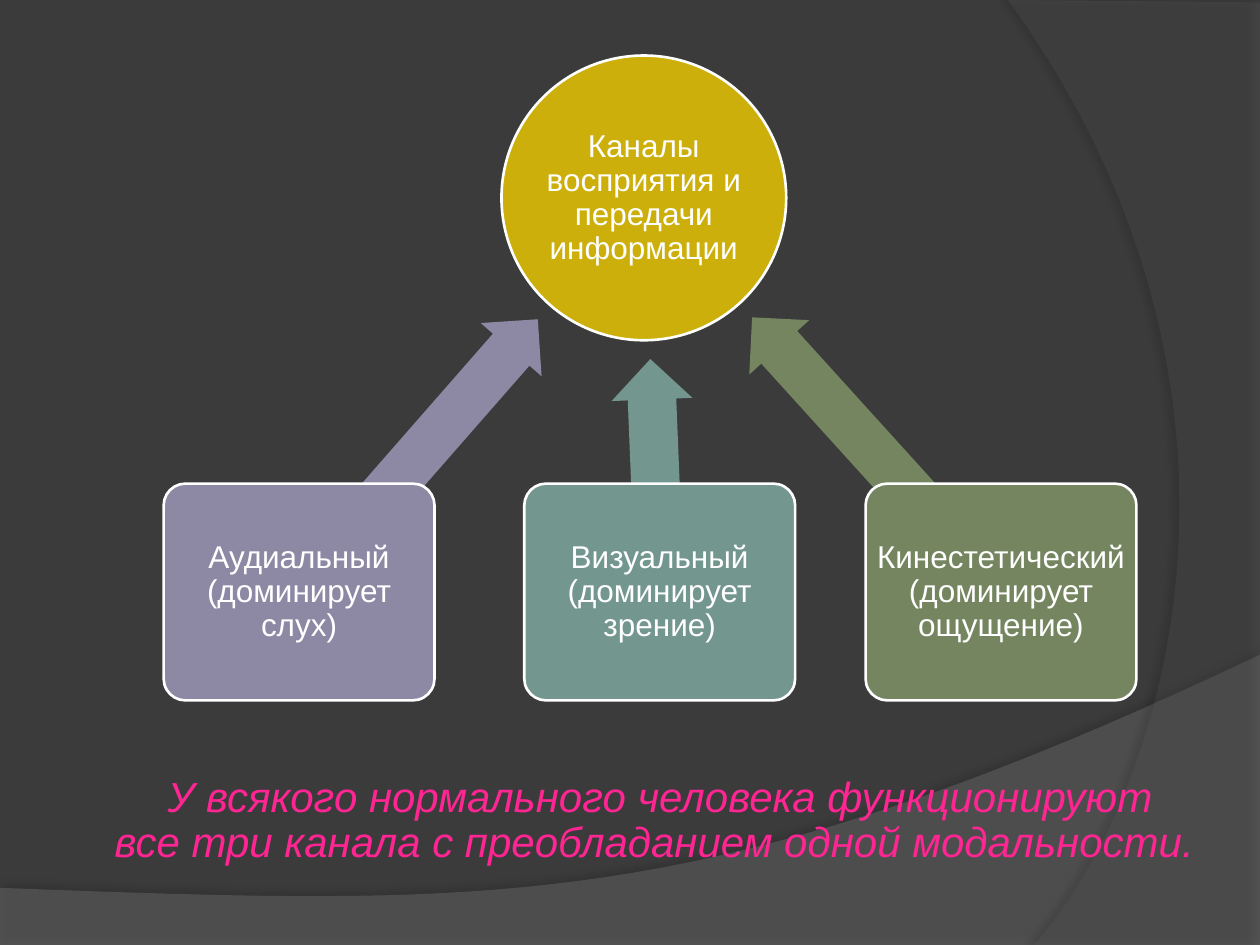
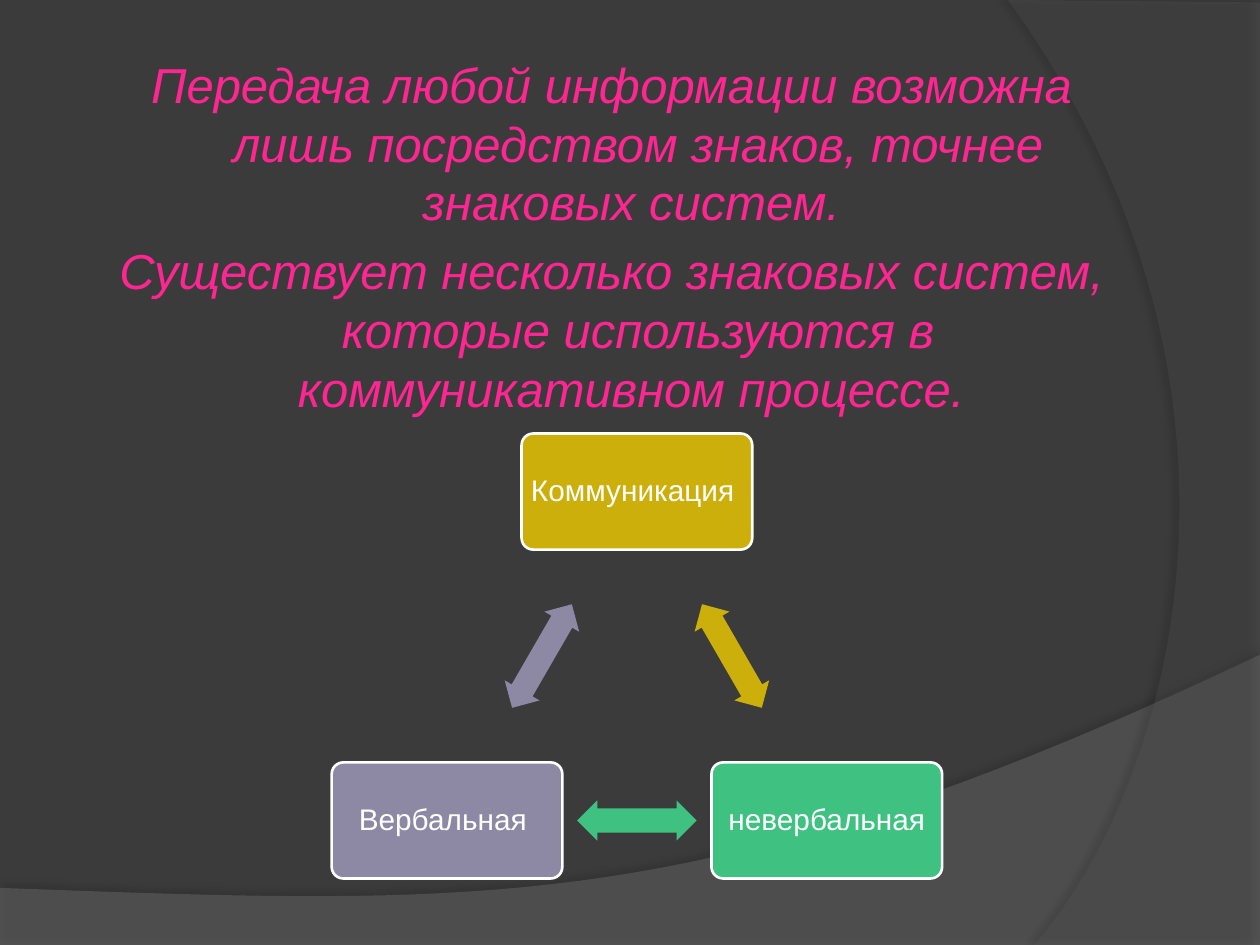
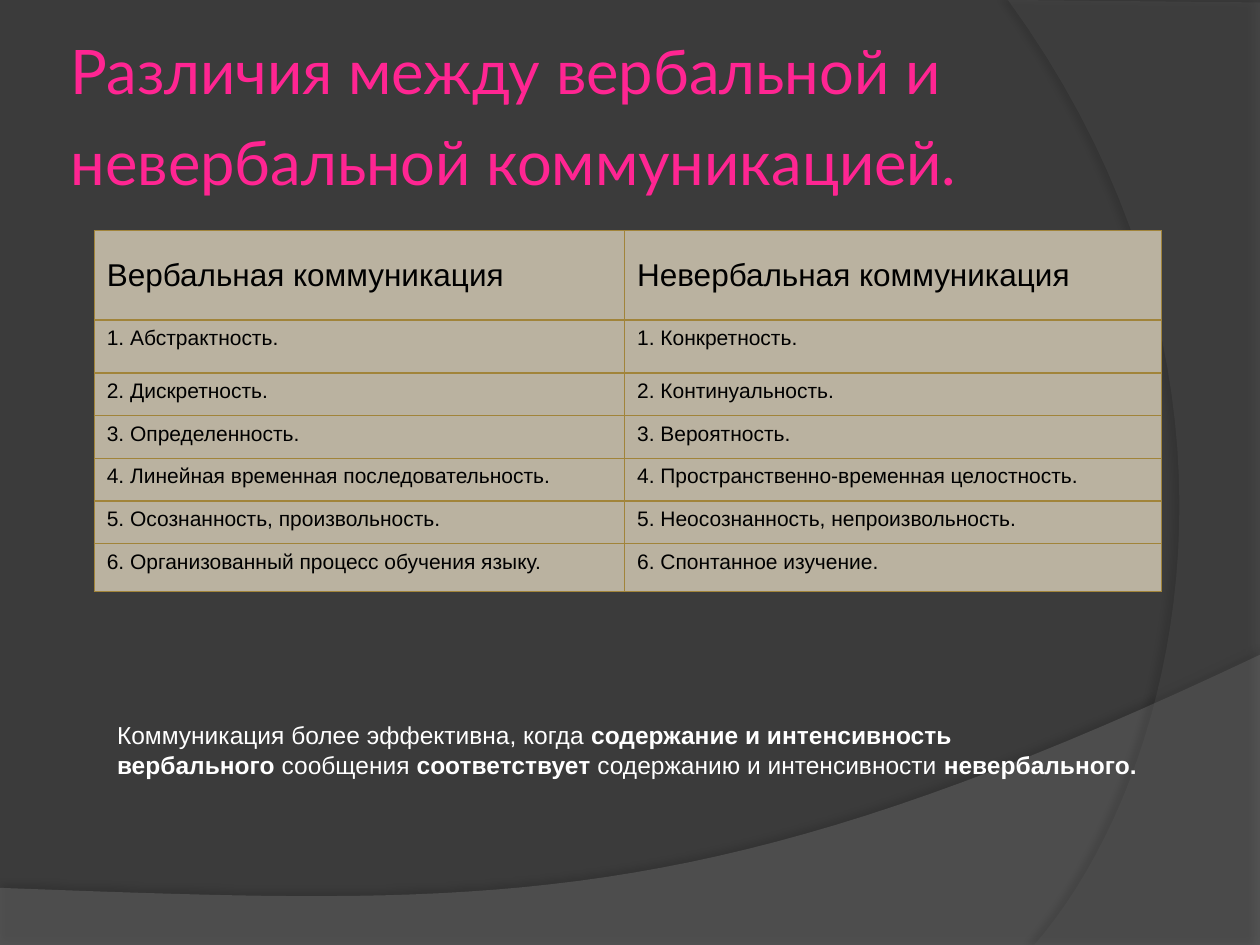
import math

from lxml import etree
from pptx import Presentation
from pptx.dml.color import RGBColor
from pptx.enum import shapes, text
from pptx.oxml import ns
from pptx.util import Cm, Pt

BACKGROUND = RGBColor(0x3B, 0x3B, 0x3B)
LOWER_BAND = RGBColor(0x7F, 0x7F, 0x7F)
RIGHT_BAND = RGBColor(0x5E, 0x5E, 0x5E)
PINK = RGBColor(0xFF, 0x25, 0x92)
WHITE = RGBColor(0xFF, 0xFF, 0xFF)
BLACK = RGBColor(0, 0, 0)
GOLD = RGBColor(0xCC, 0xAF, 0x0A)
LILAC = RGBColor(0x8D, 0x89, 0xA4)
TEAL = RGBColor(0x73, 0x96, 0x8F)
OLIVE = RGBColor(0x74, 0x85, 0x60)
GREEN = RGBColor(0x3F, 0xC2, 0x81)
SAND = RGBColor(0xBA, 0xB2, 0xA0)
BORDER = "A1843A"

SLIDE_W, SLIDE_H = 25.4, 19.05
KIND = shapes.MSO_SHAPE
CENTER = text.PP_ALIGN.CENTER

HUB = "Каналы восприятия и передачи информации"
CHANNELS = [
    ("Аудиальный (доминирует слух)", LILAC, 3.3),
    ("Визуальный (доминирует зрение)", TEAL, 10.57),
    ("Кинестетический (доминирует ощущение)", OLIVE, 17.45),
]
CHANNELS_NOTE = ("У всякого нормального человека функционируют "
                 "все три канала с преобладанием одной модальности.")

SIGNS = [
    "Передача любой информации возможна лишь посредством знаков, точнее знаковых систем. ",
    "Существует несколько знаковых систем, которые используются в коммуникативном процессе. ",
]
CYCLE = [("Коммуникация ", GOLD), ("невербальная", GREEN), ("Вербальная ", LILAC)]

TITLE = "Различия между вербальной и невербальной коммуникацией."
DIFFERENCES = [
    ("Вербальная коммуникация", "Невербальная коммуникация"),
    ("1. Абстрактность.", "1. Конкретность."),
    ("2. Дискретность.", "2. Континуальность."),
    ("3. Определенность.", "3. Вероятность."),
    ("4. Линейная временная последовательность.", "4. Пространственно-временная целостность."),
    ("5. Осознанность, произвольность.", "5. Неосознанность, непроизвольность."),
    ("6. Организованный процесс обучения языку.", "6. Спонтанное изучение."),
]
COLUMN_WIDTHS = [10.69, 10.82]
ROW_HEIGHTS = [1.8, 1.07, 0.86, 0.86, 0.86, 0.86, 0.97]
# Asterisks enclose bold words
EFFECT_NOTE = [
    "Коммуникация более эффективна, когда *содержание и интенсивность*",
    "*вербального* сообщения* соответствует *содержанию и интенсивности *невербального.*",
]


def write(frame, paragraphs, size=18, color=WHITE, font="Arial", italic=False,
          align=None, spacing=None, gap=0, margin=None, indent=None,
          anchor=text.MSO_ANCHOR.TOP):
    """Fill a text frame; asterisks in a paragraph switch bold on and off."""
    frame.word_wrap = True
    frame.vertical_anchor = anchor
    if margin is not None:
        frame.margin_left = frame.margin_right = Cm(margin)
        frame.margin_top = frame.margin_bottom = Cm(margin)
    for i, content in enumerate(paragraphs):
        paragraph = frame.add_paragraph() if i else frame.paragraphs[0]
        paragraph.alignment = align
        if spacing:
            paragraph.line_spacing = spacing
        if i and gap:
            paragraph.space_before = Pt(gap)
        if indent:
            left, first = indent
            properties = paragraph._p.get_or_add_pPr()
            properties.set("marL", str(Cm(left)))
            properties.set("indent", str(Cm(first)))
        for j, words in enumerate(content.split("*")):
            if words:
                add_run(paragraph, words, size, color, font, italic, j % 2 == 1)


def add_run(paragraph, words, size, color, font, italic=False, bold=False):
    run = paragraph.add_run()
    run.text = words
    run.font.size = Pt(size)
    run.font.name = font
    run.font.color.rgb = color
    run.font.italic = italic
    run.font.bold = bold


def add_text(slide, box, paragraphs, **style):
    frame = slide.shapes.add_textbox(*map(Cm, box)).text_frame
    write(frame, paragraphs, **style)
    return frame


def paint(shape, color, outlined=False):
    shape.shadow.inherit = False
    shape.fill.solid()
    shape.fill.fore_color.rgb = color
    if outlined:
        shape.line.color.rgb = WHITE
        shape.line.width = Pt(1.5)
    else:
        shape.line.fill.background()


def add_centered(slide, kind, center, width, height, color, label=None, size=18):
    x, y = center
    shape = slide.shapes.add_shape(kind, Cm(x - width / 2), Cm(y - height / 2),
                                   Cm(width), Cm(height))
    paint(shape, color, outlined=label is not None)
    if kind == KIND.ROUNDED_RECTANGLE:
        shape.adjustments[0] = 0.1
    if label:
        write(shape.text_frame, [label], size=size, align=CENTER, spacing=0.9,
              margin=0.02, anchor=text.MSO_ANCHOR.MIDDLE)
    return shape


def add_arrow(slide, kind, center, length, thickness, rotation, color):
    arrow = add_centered(slide, kind, center, length, thickness, color)
    arrow.adjustments[0], arrow.adjustments[1] = 0.6, 0.5
    arrow.rotation = rotation % 360


def bezier(start, control_1, control_2, end, steps=40):
    points = []
    for i in range(steps + 1):
        t = i / steps
        weights = ((1 - t) ** 3, 3 * t * (1 - t) ** 2, 3 * t * t * (1 - t), t ** 3)
        points.append(tuple(
            sum(w * p[axis] for w, p in zip(weights, (start, control_1, control_2, end)))
            for axis in (0, 1)))
    return points


def add_band(slide, points, color, opacity, shade, distance, direction):
    """Translucent shape with a soft shadow; percentages, points and degrees."""
    builder = slide.shapes.build_freeform(Cm(points[0][0]), Cm(points[0][1]))
    builder.add_line_segments([(Cm(x), Cm(y)) for x, y in points[1:]], close=True)
    band = builder.convert_to_shape()
    paint(band, color)
    properties = band._element.spPr
    fill_color = properties.find(ns.qn("a:solidFill"))[0]
    etree.SubElement(fill_color, ns.qn("a:alpha"), val=str(opacity * 1000))
    shadow = etree.SubElement(
        properties.find(ns.qn("a:effectLst")), ns.qn("a:outerShdw"),
        blurRad=str(Pt(4)), dist=str(Pt(distance)), dir=str(direction * 60000),
        algn="ctr", rotWithShape="0")
    shadow_color = etree.SubElement(shadow, ns.qn("a:srgbClr"), val="000000")
    etree.SubElement(shadow_color, ns.qn("a:alpha"), val=str(shade * 1000))


def new_slide(deck):
    slide = deck.slides.add_slide(deck.slide_layouts[6])
    lower_curve = bezier((SLIDE_W, 13.2), (14.2, 18.52), (9.93, 18.26), (0, 17.9))
    add_band(slide, lower_curve + [(0, SLIDE_H), (SLIDE_W, SLIDE_H)],
             LOWER_BAND, 34, 35, 3.5, 270)
    right_curve = bezier((20.85, SLIDE_H), (23.75, 15.72), (25.86, 7.62), (20.32, 0))
    add_band(slide, right_curve + [(SLIDE_W, 0.05), (SLIDE_W, SLIDE_H)],
             RIGHT_BAND, 23, 45, 4, 180)
    return slide


def channels_slide(deck):
    slide = new_slide(deck)
    add_text(slide, (0.89, 15.52, 23.9, 2.11), [CHANNELS_NOTE], size=24, color=PINK,
             italic=True, spacing=0.9, indent=(1.17, 1.07))
    hub = (12.98, 3.99)
    card_w, card_h, card_top, reach = 5.46, 4.37, 9.75, 3.25
    add_centered(slide, KIND.OVAL, hub, 5.74, 5.74, GOLD, HUB)
    for label, color, left in CHANNELS:
        card = (left + card_w / 2, card_top + card_h / 2)
        angle = math.atan2(hub[1] - card[1], hub[0] - card[0])
        length = math.dist(hub, card) - reach
        middle = (card[0] + length / 2 * math.cos(angle),
                  card[1] + length / 2 * math.sin(angle))
        add_arrow(slide, KIND.LEFT_ARROW, middle, length, 1.63,
                  math.degrees(angle) + 180, color)
        add_centered(slide, KIND.ROUNDED_RECTANGLE, card, card_w, card_h, color, label)


def signs_slide(deck):
    slide = new_slide(deck)
    add_text(slide, (1.9, 0.97, 20.75, 8.41), SIGNS, size=28, color=PINK, italic=True,
             align=CENTER, gap=5.6, indent=(1.17, -1.07))
    ring_x, ring_y, radius = 12.84, 14.33, 4.42
    angles = [math.radians(-90 + 360 / len(CYCLE) * i) for i in range(len(CYCLE))]
    centers = [(ring_x + radius * math.cos(a), ring_y + radius * math.sin(a))
               for a in angles]
    following = centers[1:] + centers[:1]
    for (label, color), (x, y), (next_x, next_y) in zip(CYCLE, centers, following):
        add_centered(slide, KIND.ROUNDED_RECTANGLE, (x, y), 4.65, 2.34, color, label, 17)
        rotation = math.degrees(math.atan2(next_y - y, next_x - x))
        add_arrow(slide, KIND.LEFT_RIGHT_ARROW, ((x + next_x) / 2, (y + next_y) / 2),
                  2.41, 0.81, rotation, color)


def fill_cell(cell, words, header):
    properties = cell._tc.get_or_add_tcPr()
    for side in ("lnL", "lnR", "lnT", "lnB"):
        line = etree.SubElement(properties, ns.qn("a:" + side), w=str(Pt(0.75)))
        fill = etree.SubElement(line, ns.qn("a:solidFill"))
        etree.SubElement(fill, ns.qn("a:srgbClr"), val=BORDER)
    cell.fill.solid()
    cell.fill.fore_color.rgb = SAND
    write(cell.text_frame, [words], size=18 if header else 12, color=BLACK)
    cell.vertical_anchor = text.MSO_ANCHOR.MIDDLE if header else text.MSO_ANCHOR.TOP


def differences_slide(deck):
    slide = new_slide(deck)
    title = add_text(slide, (1.3, 0.53, 22.91, 3.66), [TITLE], size=35.1, color=PINK,
                     font="Lato", margin=0.13, anchor=text.MSO_ANCHOR.MIDDLE)
    add_run(title.paragraphs[0], " ", 44.9, WHITE, "Lato")

    table = slide.shapes.add_table(
        len(ROW_HEIGHTS), len(COLUMN_WIDTHS), Cm(1.9), Cm(4.65),
        Cm(sum(COLUMN_WIDTHS)), Cm(sum(ROW_HEIGHTS))).table
    table.first_row = table.horz_banding = False
    for column, width in zip(table.columns, COLUMN_WIDTHS):
        column.width = Cm(width)
    for i, (height, entries) in enumerate(zip(ROW_HEIGHTS, DIFFERENCES)):
        table.rows[i].height = Cm(height)
        for j, words in enumerate(entries):
            fill_cell(table.cell(i, j), words, header=i == 0)

    add_text(slide, (2.11, 14.4, 21.59, 2.03), EFFECT_NOTE, size=14)


def main():
    deck = Presentation()
    deck.slide_width, deck.slide_height = Cm(SLIDE_W), Cm(SLIDE_H)
    backdrop = deck.slide_master.background.fill
    backdrop.solid()
    backdrop.fore_color.rgb = BACKGROUND
    channels_slide(deck)
    signs_slide(deck)
    differences_slide(deck)
    deck.save("out.pptx")


if __name__ == "__main__":
    main()
